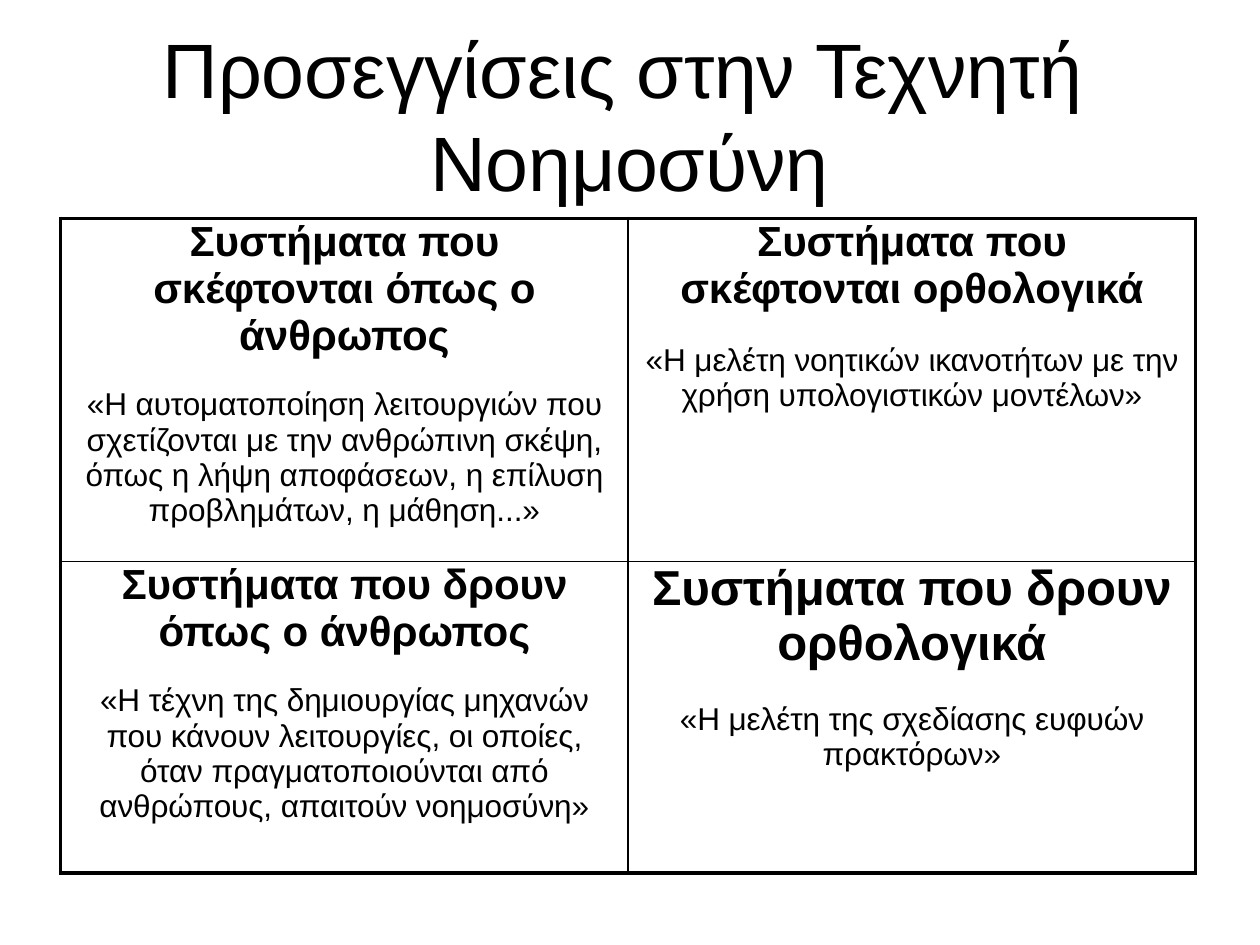
from pptx import Presentation
from pptx.dml.color import RGBColor
from pptx.enum.text import MSO_ANCHOR, MSO_AUTO_SIZE, PP_ALIGN
from pptx.oxml import parse_xml
from pptx.oxml.ns import nsdecls
from pptx.util import Pt

PX = 9144  # EMU; 100 px to the inch
BLACK = RGBColor(0, 0, 0)
OUTER, INNER = Pt(2.25), Pt(1)

# heading, heading size, heading margin, quote, quote margin, space before quote
APPROACHES = [
    [("Συστήματα που σκέφτονται όπως ο άνθρωπος", 24, 69,
      "«Η αυτοματοποίηση λειτουργιών που σχετίζονται με την ανθρώπινη σκέψη, "
      "όπως η λήψη αποφάσεων, η επίλυση προβλημάτων, η μάθηση...»", 16, 16.1),
     ("Συστήματα που σκέφτονται ορθολογικά", 24, 38,
      "«Η μελέτη νοητικών ικανοτήτων με την χρήση υπολογιστικών μοντέλων»", 11, 17.4)],
    [("Συστήματα που δρουν όπως ο άνθρωπος", 24, 45,
      "«Η τέχνη της δημιουργίας μηχανών που κάνουν λειτουργίες, οι οποίες, "
      "όταν πραγματοποιούνται από ανθρώπους, απαιτούν νοημοσύνη»", 28, 16.1),
     ("Συστήματα που δρουν ορθολογικά", 28, 16,
      "«Η μελέτη της σχεδίασης ευφυών πρακτόρων»", 39, 17.5)],
]


def write(paragraph, text, size, bold, left, right, indent, spacing):
    """Fill a paragraph; margins and indent in px, letter spacing in 1/100 pt."""
    properties = paragraph._p.get_or_add_pPr()
    for name, length in (("marL", left), ("marR", right), ("indent", indent)):
        properties.set(name, str(length * PX))
    run = paragraph.add_run()
    run.text = text
    run.font.name = "Arial"
    run.font.size = Pt(size)
    run.font.bold = bold
    run.font.color.rgb = BLACK
    run._r.get_or_add_rPr().set("spc", str(spacing))


def set_borders(cell, widths):
    """Draw the left, right, top and bottom borders of a cell."""
    properties = cell._tc.get_or_add_tcPr()
    for position, (side, width) in enumerate(zip("LRTB", widths)):
        properties.insert(position, parse_xml(
            f'<a:ln{side} {nsdecls("a")} w="{width}"><a:solidFill>'
            f'<a:srgbClr val="{BLACK}"/></a:solidFill></a:ln{side}>'))


presentation = Presentation()
presentation.slide_width = 999 * PX
presentation.slide_height = 749 * PX
slide = presentation.slides.add_slide(presentation.slide_layouts[5])

title = slide.shapes.title
title.left, title.top, title.width, title.height = (
    length * PX for length in (128, 17, 743, 147))
frame = title.text_frame
frame.margin_left = frame.margin_right = frame.margin_top = frame.margin_bottom = 0
frame.vertical_anchor = MSO_ANCHOR.TOP
frame.word_wrap = True
frame.auto_size = MSO_AUTO_SIZE.SHAPE_TO_FIT_TEXT
title_line = frame.paragraphs[0]
title_line.alignment = PP_ALIGN.LEFT
write(title_line, "Προσεγγίσεις στην Τεχνητή Νοημοσύνη", 44, False, 213, 0, -212, -10)

table = slide.shapes.add_table(2, 2, 48 * PX, 173 * PX, 900 * PX, 519 * PX).table
table.first_row = table.horz_banding = False
for column in table.columns:
    column.width = 450 * PX
for row, height in zip(table.rows, (272, 247)):
    row.height = height * PX

for i, approaches in enumerate(APPROACHES):
    for j, (heading, size, margin, quote, quote_margin, gap) in enumerate(approaches):
        cell = table.cell(i, j)
        cell.margin_left = cell.margin_right = cell.margin_top = cell.margin_bottom = 0
        cell.fill.background()
        set_borders(cell, (INNER if j else OUTER, OUTER if j else INNER,
                           INNER if i else OUTER, OUTER if i else INNER))
        heading_line = cell.text_frame.paragraphs[0]
        quote_line = cell.text_frame.add_paragraph()
        heading_line.alignment = quote_line.alignment = PP_ALIGN.CENTER
        quote_line.space_before = Pt(gap)
        write(heading_line, heading, size, True, margin, margin, 0, -5)
        write(quote_line, quote, 18, False, quote_margin, quote_margin, 0, -5)

presentation.save("out.pptx")
